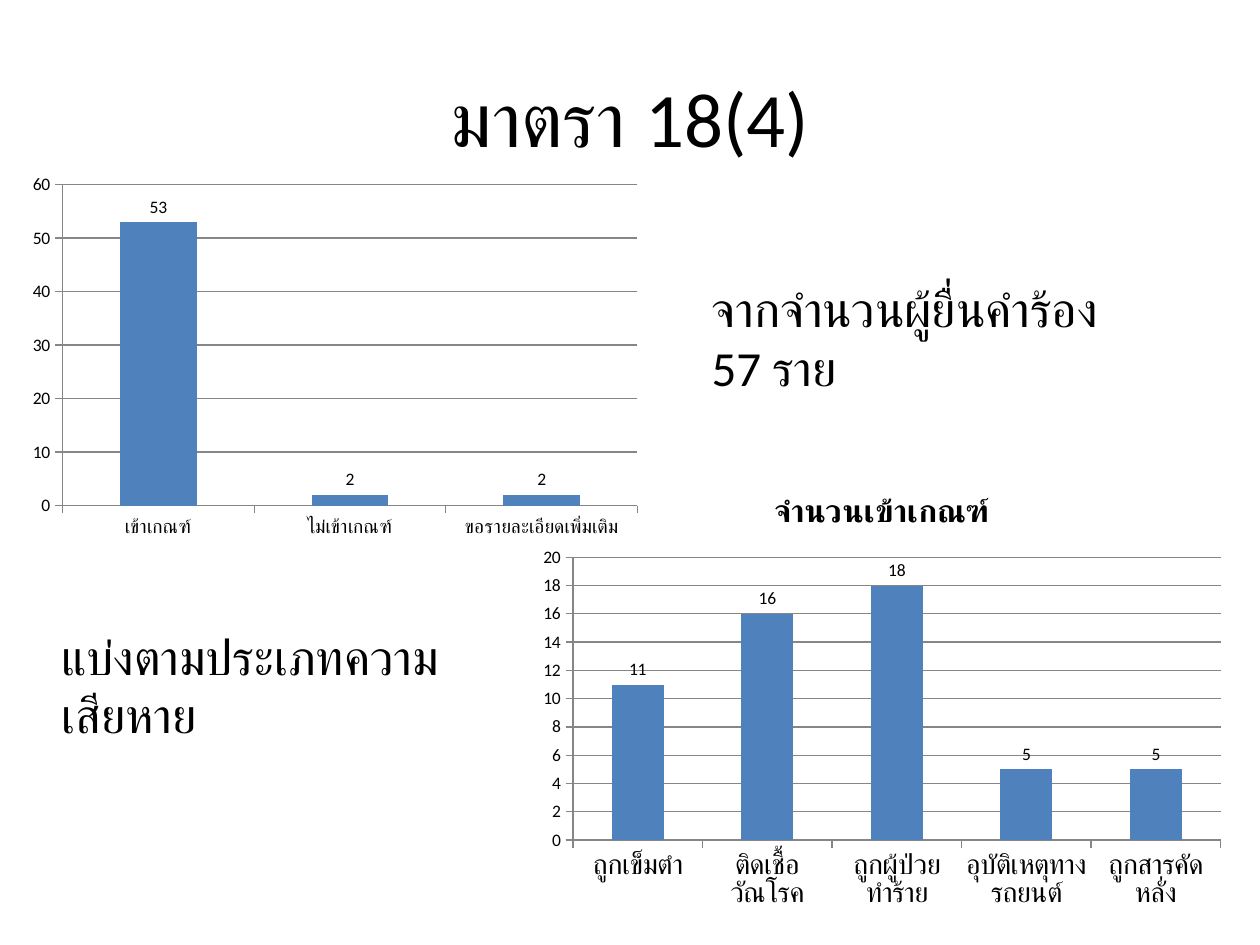
from pptx import Presentation
from pptx.chart.data import CategoryChartData
from pptx.dml.color import RGBColor
from pptx.enum.chart import XL_CHART_TYPE as ChartType
from pptx.enum.chart import XL_LABEL_POSITION as LabelPosition
from pptx.enum.chart import XL_TICK_MARK as TickMark
from pptx.enum.text import MSO_ANCHOR as Anchor
from pptx.enum.text import MSO_AUTO_SIZE as AutoSize
from pptx.enum.text import PP_ALIGN as Align
from pptx.util import Inches, Pt

WIDTH, HEIGHT = 10, 7.5
FONT = "Calibri"
BLACK, BAR_BLUE, AXIS_GRAY = "000000", "4F81BD", "868686"


def color(hex_string):
    """Turn a hex string into a colour."""
    return RGBColor.from_string(hex_string)


def style_font(font, size, bold=False):
    """Give a font the slide's typeface and colour."""
    font.name, font.size, font.bold = FONT, Pt(size), bold
    font.color.rgb = color(BLACK)


def place(left, top, width, height):
    """Turn a box in inches into slide lengths."""
    return [Inches(length) for length in (left, top, width, height)]


def add_words(slide, box, words, size, align=Align.LEFT, anchor=Anchor.TOP, grow=True):
    """Write one wrapped line of words in the box."""
    frame = slide.shapes.add_textbox(*place(*box)).text_frame
    frame.word_wrap = True
    frame.auto_size = AutoSize.SHAPE_TO_FIT_TEXT if grow else AutoSize.NONE
    frame.vertical_anchor = anchor
    paragraph = frame.paragraphs[0]
    paragraph.alignment = align
    run = paragraph.add_run()
    run.text = words
    style_font(run.font, size)


def add_case_chart(slide, box, counts, category_size, top, step, heading=None):
    """Draw the case counts as columns in the box."""
    cases = CategoryChartData()
    cases.categories = list(counts)
    cases.add_series("Series 1", list(counts.values()))
    chart = slide.shapes.add_chart(ChartType.COLUMN_CLUSTERED, *place(*box), cases).chart
    style_font(chart.font, 10)
    chart.has_legend = False
    chart.has_title = heading is not None
    if heading:
        run = chart.chart_title.text_frame.paragraphs[0].add_run()
        run.text = heading
        style_font(run.font, 18, bold=True)

    plot = chart.plots[0]
    plot.gap_width = 150
    plot.vary_by_categories = False
    plot.has_data_labels = True
    labels = plot.data_labels
    labels.show_value = True
    labels.position = LabelPosition.OUTSIDE_END
    style_font(labels.font, 10)
    columns = plot.series[0]
    columns.invert_if_negative = False
    columns.format.fill.solid()
    columns.format.fill.fore_color.rgb = color(BAR_BLUE)

    counts_axis = chart.value_axis
    counts_axis.minimum_scale, counts_axis.maximum_scale = 0, top
    counts_axis.major_unit = step
    counts_axis.has_major_gridlines = True
    for axis, size in ((chart.category_axis, category_size), (counts_axis, 10)):
        axis.major_tick_mark = TickMark.OUTSIDE
        style_font(axis.tick_labels.font, size)
        axis.format.line.color.rgb = color(AXIS_GRAY)
    counts_axis.major_gridlines.format.line.color.rgb = color(AXIS_GRAY)


def build_section_slide(slide, width, height):
    """Lay out the heading and two rows of chart and note."""
    note_size = (0.36 * width, 0.076 * height)
    add_words(slide, (0.05 * width, 0.04 * height, 0.9 * width, height / 6),
              "มาตรา 18(4)", 44, Align.CENTER, Anchor.MIDDLE, grow=False)
    add_case_chart(
        slide, (0.42 * width, 0.5 * height, 0.56 * width, 0.47 * height),
        {"ถูกเข็มตำ": 11, "ติดเชื้อวัณโรค": 16, "ถูกผู้ป่วยทำร้าย": 18,
         "อุบัติเหตุทางรถยนต์": 5, "ถูกสารคัดหลั่ง": 5},
        16, 20, 2, "จำนวนเข้าเกณฑ์")
    add_case_chart(
        slide, (0.016 * width, 0.177 * height, 0.5 * width, 0.4 * height),
        {"เข้าเกณฑ์": 53, "ไม่เข้าเกณฑ์": 2, "ขอรายละเอียดเพิ่มเติม": 2},
        11, 60, 10)
    add_words(slide, (0.555 * width, 0.288 * height, *note_size),
              "จากจำนวนผู้ยื่นคำร้อง 57 ราย", 28)
    add_words(slide, (0.039 * width, 0.656 * height, *note_size),
              "แบ่งตามประเภทความเสียหาย", 28)


def main():
    """Build and save the slide."""
    deck = Presentation()
    deck.slide_width, deck.slide_height = Inches(WIDTH), Inches(HEIGHT)
    slide = deck.slides.add_slide(deck.slide_layouts[6])
    build_section_slide(slide, WIDTH, HEIGHT)
    deck.save("out.pptx")


if __name__ == "__main__":
    main()
